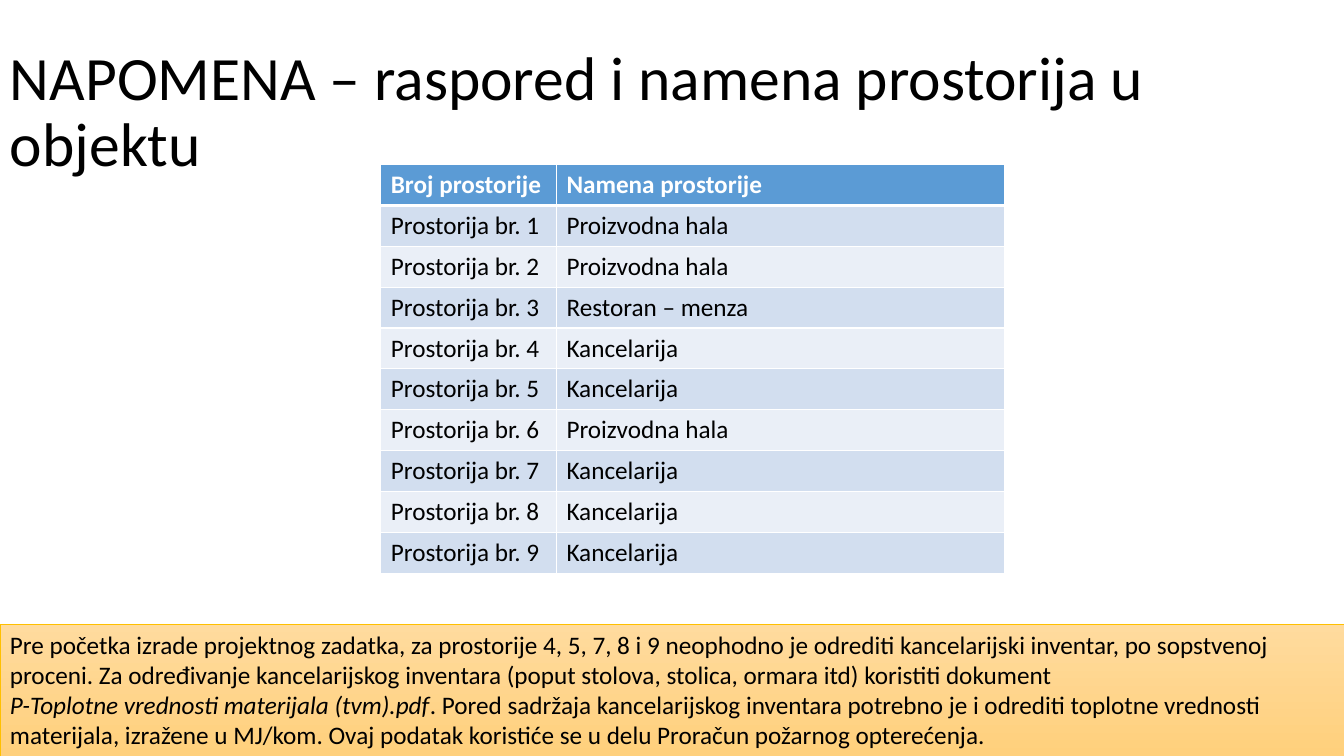
from lxml import etree
from pptx import Presentation
from pptx.dml.color import RGBColor
from pptx.enum import shapes, text
from pptx.oxml.ns import qn
from pptx.util import Pt

# Content
TITLE = "NAPOMENA – raspored i namena prostorija u objektu"
HEADER = ("Broj prostorije", "Namena prostorije")
HALL, CANTEEN, OFFICE = "Proizvodna hala", "Restoran – menza", "Kancelarija"
PURPOSES = [HALL, HALL, CANTEEN, OFFICE, OFFICE, HALL, OFFICE, OFFICE, OFFICE]
# Paragraphs of (wording, italic) runs
NOTE = [
    [("Pre početka izrade projektnog zadatka, za prostorije 4, 5, 7, 8 i 9 neophodno je "
      "odrediti kancelarijski inventar, po sopstvenoj proceni. Za određivanje kancelarijskog "
      "inventara (poput stolova, stolica, ormara itd) koristiti dokument", False)],
    [("P-Toplotne vrednosti materijala (tvm).pdf", True),
     (". Pored sadržaja kancelarijskog inventara potrebno je i odrediti toplotne vrednosti "
      "materijala, izražene u MJ/kom. Ovaj podatak koristiće se u delu Proračun požarnog "
      "opterećenja.", False)],
]

# Layout and colours
WIDTH, HEIGHT = 960, 540
TABLE_LEFT, TABLE_TOP, ROW_HEIGHT = 272, 117.5, 29.2
COLUMN_WIDTHS = (125.5, 320)
NOTE_TOP = 445.7
HEADER_FILL, BAND_FILLS = "5B9BD5", ("D2DEEF", "EAEFF7")
BLACK, WHITE = "000000", "FFFFFF"


def color(hex_code):
    return RGBColor.from_string(hex_code)


def style(font, size, hex_code, bold=False, italic=False):
    font.name, font.size = "Calibri", Pt(size)
    font.bold, font.italic = bold, italic
    font.color.rgb = color(hex_code)


def add_border(cell, side, width):
    line = etree.SubElement(cell._tc.get_or_add_tcPr(), qn(f"a:ln{side}"), w=str(Pt(width)))
    fill = etree.SubElement(line, qn("a:solidFill"))
    etree.SubElement(fill, qn("a:srgbClr"), val=WHITE)


prs = Presentation()
prs.slide_width, prs.slide_height = Pt(WIDTH), Pt(HEIGHT)
slide = prs.slides.add_slide(prs.slide_layouts[6])

# Title
title = slide.shapes.add_textbox(0, Pt(28.8), Pt(WIDTH), Pt(104.4)).text_frame
title.word_wrap = True
title.vertical_anchor = text.MSO_ANCHOR.MIDDLE
title.text = TITLE
title.paragraphs[0].line_spacing = 0.9
style(title.paragraphs[0].runs[0].font, 44, BLACK)

# Room table
rooms = [HEADER] + [(f"Prostorija br. {n}", purpose) for n, purpose in enumerate(PURPOSES, 1)]
room_table = slide.shapes.add_table(
    len(rooms), len(HEADER), Pt(TABLE_LEFT), Pt(TABLE_TOP),
    Pt(sum(COLUMN_WIDTHS)), Pt(ROW_HEIGHT * len(rooms))).table
for column, width in zip(room_table.columns, COLUMN_WIDTHS):
    column.width = Pt(width)
for r, room in enumerate(rooms):
    room_table.rows[r].height = Pt(ROW_HEIGHT)
    is_header = r == 0
    for c, wording in enumerate(room):
        cell = room_table.cell(r, c)
        cell.text = wording
        style(cell.text_frame.paragraphs[0].runs[0].font, 18,
              WHITE if is_header else BLACK, bold=is_header)
        for side, width in (("L", 1), ("R", 1), ("T", 3 if r == 1 else 1),
                            ("B", 3 if is_header else 1)):
            add_border(cell, side, width)
        cell.fill.solid()
        cell.fill.fore_color.rgb = color(HEADER_FILL if is_header else BAND_FILLS[(r - 1) % 2])

# Note band
band = slide.shapes.add_shape(shapes.MSO_SHAPE.RECTANGLE, 0, Pt(NOTE_TOP),
                              Pt(WIDTH), Pt(HEIGHT - NOTE_TOP))
band.shadow.inherit = False
band.fill.gradient()
band.fill.gradient_angle = 270
for stop, hex_code in zip(band.fill.gradient_stops, ("FFDB9E", "FFD07C")):
    stop.color.rgb = color(hex_code)
band.line.color.rgb = color("FFC000")
band.line.width = Pt(0.5)
note = band.text_frame
note.word_wrap = True
note.vertical_anchor = text.MSO_ANCHOR.TOP
for i, runs in enumerate(NOTE):
    paragraph = note.add_paragraph() if i else note.paragraphs[0]
    paragraph.alignment = text.PP_ALIGN.LEFT
    for wording, italic in runs:
        run = paragraph.add_run()
        run.text = wording
        style(run.font, 18, BLACK, italic=italic)

prs.save("out.pptx")
